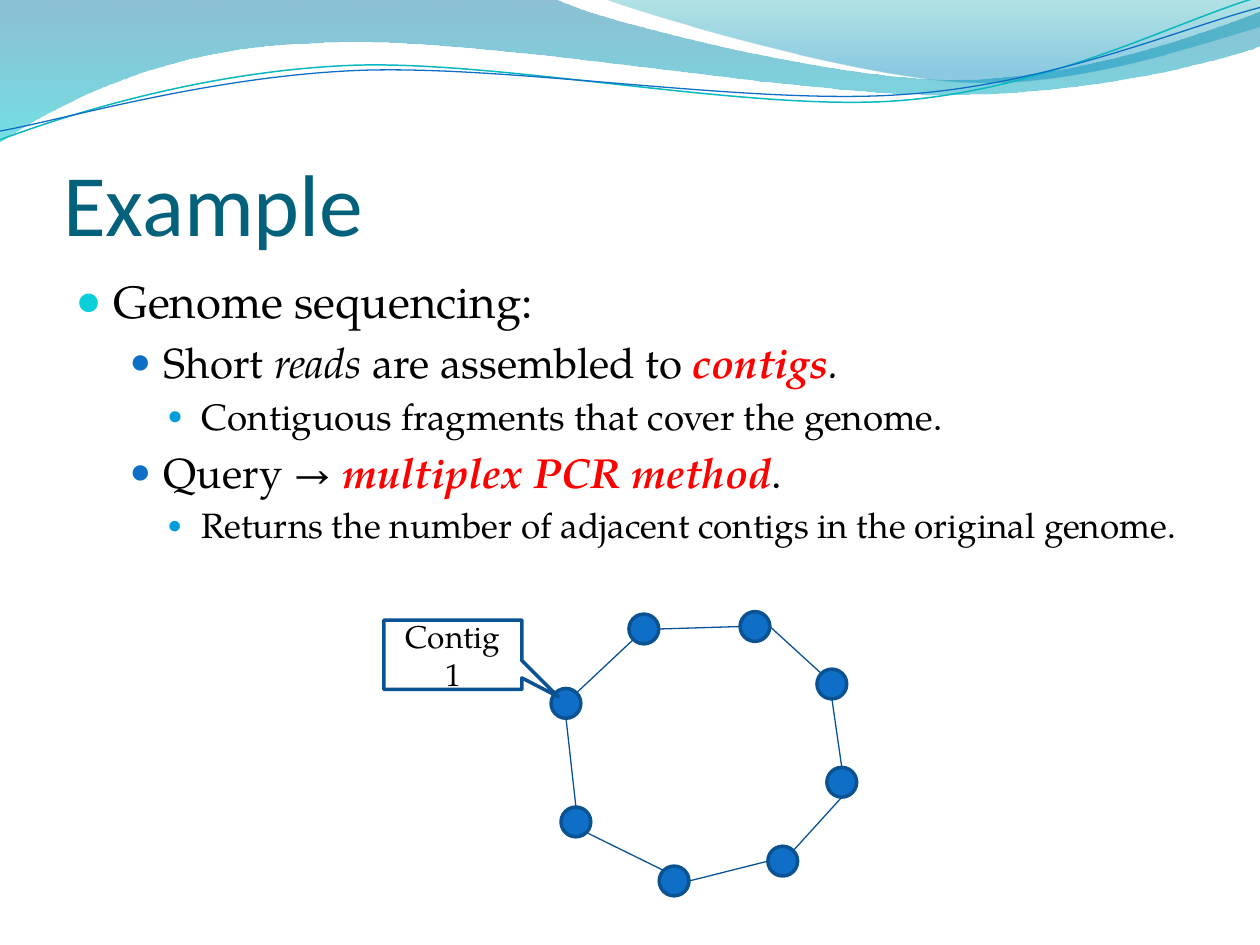
"""Build a slide on genome sequencing with a ring of linked contigs under a wave header."""
import math

from lxml import etree
from pptx import Presentation
from pptx import util as u
from pptx.dml.color import RGBColor
from pptx.enum import shapes, text
from pptx.oxml.ns import qn

COLORS = {
    "title": "04617B", "black": "000000", "red": "FF0000",
    "node": "0F6FC6", "outline": "0B5292", "link": "095295",
    "teal": "0AB8BF", "bullet0": "0BD0D9", "bullet1": "0F6FC6", "bullet2": "009DD9",
}
BODY_FONT = "TeX Gyre Pagella"
INCH = 2.54


def add_wave(slide, start, segments, close):
    """Draw straight (x, y) and cubic (x1, y1, x2, y2, x, y) segments, given in inches."""
    places = [(u.Cm(x * INCH), u.Cm(y * INCH))
              for segment in [start] + segments for x, y in zip(segment[::2], segment[1::2])]
    builder = slide.shapes.build_freeform(*places[0])
    builder.add_line_segments(places[1:], close=close)
    shape = builder.convert_to_shape()
    shape.shadow.inherit = False
    steps = iter(list(shape._element.iter(qn("a:lnTo"))))
    for segment in segments:
        first, *others = [next(steps) for _ in segment[::2]]
        if others:
            curve = etree.Element(qn("a:cubicBezTo"))
            first.addprevious(curve)
            for step in [first] + others:
                curve.append(step[0])
                step.getparent().remove(step)
    return shape


def add_run(paragraph, words, font_name, size, color, bold=False, italic=False):
    """Append one formatted run."""
    run = paragraph.add_run()
    run.text = words
    run.font.name = font_name
    run.font.size = u.Pt(size)
    run.font.bold = bold
    run.font.italic = italic
    run.font.color.rgb = RGBColor.from_string(COLORS[color])


presentation = Presentation()
presentation.slide_width, presentation.slide_height = u.Cm(25.4), u.Cm(19.05)
slide = presentation.slides.add_slide(presentation.slide_layouts[1])
title, body = slide.placeholders[0], slide.placeholders[1]

filled_waves = [
    ((0, 0), [(4.4, -0.01), (4.76, 0.17, 6.64, 0.63, 7.58, 0.63), (8.53, 0.63, 9.58, 0.26, 10, 0.09),
              (10.01, 0.36), (9.83, 0.44, 8.7, 0.76, 7.46, 0.75), (6.22, 0.75, 3.82, 0.28, 2.57, 0.34),
              (1.29, 0.36, 0.46, 0.83, -0.01, 1.13), (0, 0)],
     [(0, "0074A1", 45), (1, "00C6CF", 55)]),
    ((4.79, -0.01), [(5.09, 0.11, 6.82, 0.62, 7.69, 0.65), (8.56, 0.69, 9.61, 0.32, 10, 0.21),
                     (10, 0), (4.79, -0.01)],
     [(0, "00A1A9", 30), (0.8, "008BBF", 45)]),
]
for start, segments, stops in filled_waves:
    wave = add_wave(slide, start, segments, True)
    wave.line.fill.background()
    wave.fill.gradient()
    wave.fill.gradient_angle = 270
    for gradient_stop, (position, color, _) in zip(wave.fill.gradient_stops, stops):
        gradient_stop.position = position
        gradient_stop.color.rgb = RGBColor.from_string(color)
    gradient_colors = wave._element.spPr.find(qn("a:gradFill")).iter(qn("a:srgbClr"))
    for element, (_, _, opacity) in zip(gradient_colors, stops):
        etree.SubElement(element, qn("a:alpha")).set("val", str(opacity * 1000))

line_waves = [
    ((0, 1.11), [(0.48, 0.93, 1.58, 0.57, 2.77, 0.52), (3.95, 0.47, 5.93, 0.89, 7.13, 0.8),
                 (8.33, 0.71, 9.38, 0.15, 9.98, -0.02)], "teal", 0.85),
    ((0, 1.04), [(0.47, 0.96, 1.64, 0.61, 2.83, 0.56), (4.03, 0.51, 5.97, 0.84, 7.17, 0.75),
                 (8.36, 0.67, 9.41, 0.21, 10, 0.06)], "node", 0.75),
]
for start, segments, color, width in line_waves:
    wave = add_wave(slide, start, segments, False)
    wave.fill.background()
    wave.line.color.rgb = RGBColor.from_string(COLORS[color])
    wave.line.width = u.Pt(width)

for placeholder, top, height in ((title, 1.95, 3.18), (body, 5.38, 12.19)):
    slide.shapes._spTree.append(placeholder._element)
    placeholder.left, placeholder.top = u.Cm(1.27), u.Cm(top)
    placeholder.width, placeholder.height = u.Cm(22.86), u.Cm(height)
    placeholder.text_frame.auto_size = text.MSO_AUTO_SIZE.NONE

frame = title.text_frame
frame.vertical_anchor = text.MSO_ANCHOR.BOTTOM
frame.margin_left = frame.margin_right = frame.margin_bottom = 0
frame.margin_top = u.Cm(0.13)
frame.paragraphs[0].alignment = text.PP_ALIGN.LEFT
add_run(frame.paragraphs[0], "Example", "Calibri", 50, "title")

levels = [(0.76, 0.76, 95), (1.78, 0.69, 85), (2.54, 0.69, 70)]
plain, slanted, strong = ("black", False, False), ("black", False, True), ("red", True, True)
items = [
    (0, 26, [("Genome sequencing:", plain)]),
    (1, 24, [("Short ", plain), ("reads ", slanted), ("are assembled to ", plain),
             ("contigs", strong), (".", slanted)]),
    (2, 21, [("Contiguous fragments that cover the genome.", plain)]),
    (1, 24, [("Query → ", plain), ("multiplex PCR method", strong), (".", plain)]),
    (2, 20, [("Returns the number of adjacent contigs in the original genome.", plain)]),
]
for index, (level, size, runs) in enumerate(items):
    paragraph = body.text_frame.paragraphs[0] if index == 0 else body.text_frame.add_paragraph()
    paragraph.level = level
    margin, hanging, bullet_size = levels[level]
    properties = paragraph._p.get_or_add_pPr()
    properties.set("marL", str(u.Cm(margin)))
    properties.set("indent", str(-u.Cm(hanging)))
    bullet_color = etree.SubElement(properties, qn("a:buClr"))
    etree.SubElement(bullet_color, qn("a:srgbClr")).set("val", COLORS[f"bullet{level}"])
    etree.SubElement(properties, qn("a:buSzPct")).set("val", str(bullet_size * 1000))
    etree.SubElement(properties, qn("a:buFont")).set("typeface", "Arial")
    etree.SubElement(properties, qn("a:buChar")).set("char", "●")
    for words, style in runs:
        add_run(paragraph, words, BODY_FONT, size, *style)

radius = 0.3
nodes = [(11.41, 14.18), (12.98, 12.68), (15.22, 12.63), (16.77, 13.79),
         (16.97, 15.77), (15.78, 17.36), (13.59, 17.76), (11.61, 16.57)]
link_sites = [(7, 3), (6, 2), (6, 1), (4, 0), (4, 7), (2, 6), (1, 5), (0, 4)]
for index, sites in enumerate(link_sites):
    ends = []
    for (x, y), site in zip((nodes[index], nodes[(index + 1) % len(nodes)]), sites):
        angle = math.radians(45 * site)
        ends += [u.Cm(x - radius * math.sin(angle)), u.Cm(y - radius * math.cos(angle))]
    link = slide.shapes.add_connector(shapes.MSO_CONNECTOR.STRAIGHT, *ends)
    link.line.color.rgb = RGBColor.from_string(COLORS["link"])
    link.line.width = u.Pt(0.75)
    etree.SubElement(link._element.spPr, qn("a:effectLst"))

contigs = []
for x, y in nodes:
    contig = slide.shapes.add_shape(shapes.MSO_SHAPE.OVAL, u.Cm(x - radius), u.Cm(y - radius),
                                    u.Cm(2 * radius), u.Cm(2 * radius))
    contig.fill.solid()
    contig.fill.fore_color.rgb = RGBColor.from_string(COLORS["node"])
    contigs.append(contig)

callout = slide.shapes.add_shape(shapes.MSO_SHAPE.RECTANGULAR_CALLOUT,
                                 u.Cm(7.74), u.Cm(12.5), u.Cm(2.78), u.Cm(1.4))
callout.adjustments[0], callout.adjustments[1] = 0.765, 0.605
callout.fill.background()
callout.text_frame.vertical_anchor = text.MSO_ANCHOR.MIDDLE
paragraph = callout.text_frame.paragraphs[0]
paragraph.alignment = text.PP_ALIGN.CENTER
paragraph._p.get_or_add_pPr().set("rtl", "1")
add_run(paragraph, "Contig 1", BODY_FONT, 18, "black")

for shape in contigs + [callout]:
    shape.shadow.inherit = False
    shape.line.color.rgb = RGBColor.from_string(COLORS["outline"])
    shape.line.width = u.Pt(2)

presentation.save("out.pptx")
